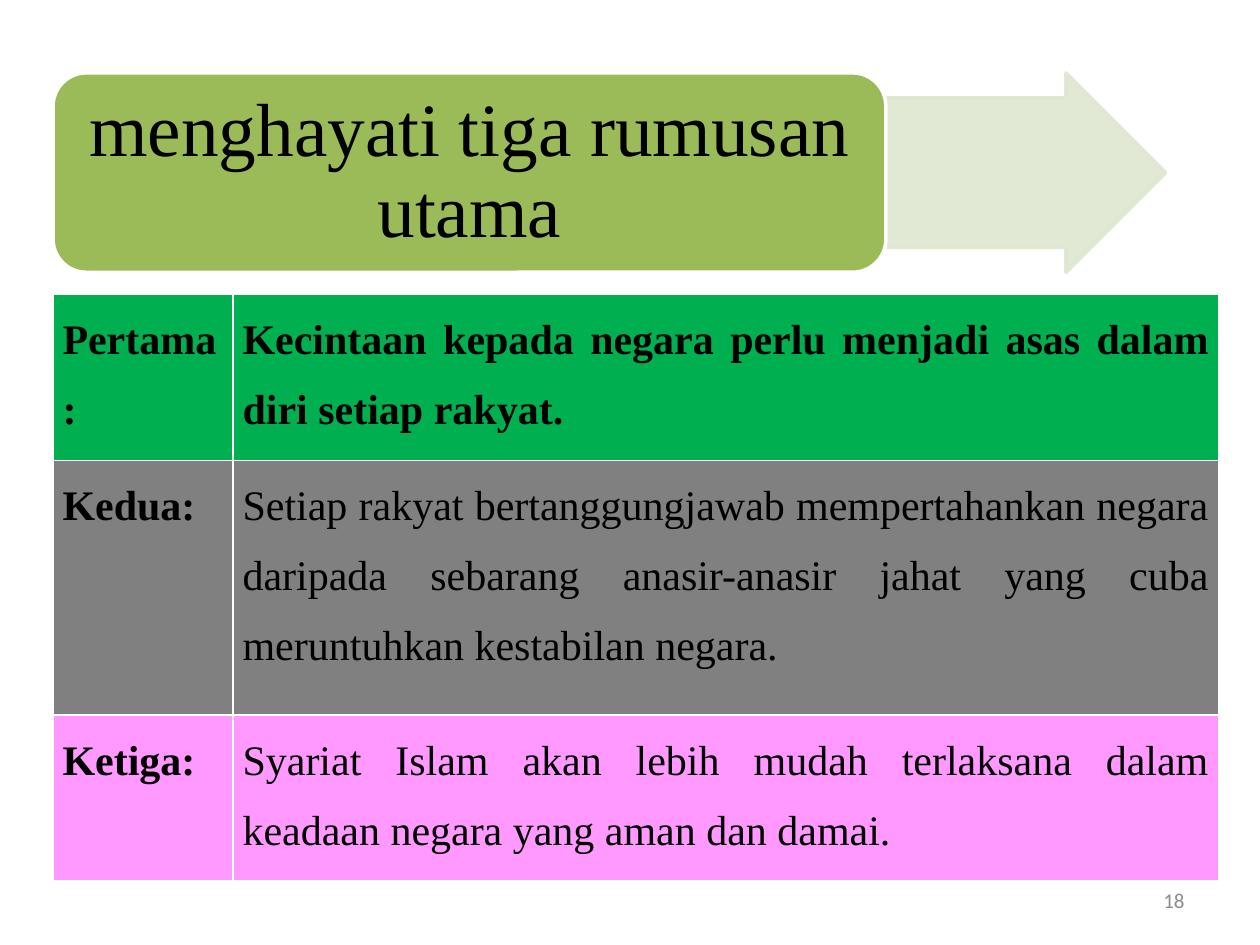
from dataclasses import dataclass

from lxml import etree
from pptx import Presentation
from pptx.dml.color import RGBColor
from pptx.enum import shapes, text
from pptx.oxml.ns import qn
from pptx.util import Cm, Pt


@dataclass(frozen=True)
class Theme:
    serif: str = "Times New Roman"
    sans: str = "Calibri"
    ink: str = "000000"
    white: str = "FFFFFF"
    page_grey: str = "8C8C8C"
    heading_green: str = "9BBB59"
    arrow_green: str = "DEE7D1"
    heading_size: float = 43
    table_size: float = 24
    page_size: float = 12


THEME = Theme()
LEFT, TOP, BAND_HEIGHT = 1.07, 1.47, 4.02
HEADING_WIDTH, ARROW_WIDTH = 16.79, 5.64
COLUMN_WIDTHS = (3.63, 19.86)
# label, statement, statement is bold, row fill, row height
CONCLUSIONS = (
    ("Pertama:", "Kecintaan kepada negara perlu menjadi asas dalam diri setiap rakyat.",
     True, "00B050", 3.35),
    ("Kedua:", "Setiap rakyat bertanggungjawab mempertahankan negara daripada sebarang "
     "anasir-anasir jahat yang cuba meruntuhkan kestabilan negara.",
     False, "808080", 5.13),
    ("Ketiga:", "Syariat Islam akan lebih mudah terlaksana dalam keadaan negara yang "
     "aman dan damai.", False, "FF99FF", 3.35),
)


def rgb(code):
    return RGBColor.from_string(code)


def write(frame, words, size, align, font=THEME.serif, color=THEME.ink,
          bold=False, spacing=1.0):
    frame.word_wrap = True
    paragraph = frame.paragraphs[0]
    paragraph.alignment = align
    paragraph.line_spacing = spacing
    run = paragraph.add_run()
    run.text = words
    run.font.name = font
    run.font.size = Pt(size)
    run.font.bold = bold
    run.font.color.rgb = rgb(color)


def set_alpha(color_format_parent, percent):
    """Make every solid colour below the given element partly transparent."""
    for color in color_format_parent.iter(qn("a:srgbClr")):
        etree.SubElement(color, qn("a:alpha")).set("val", str(percent * 1000))


def add_block(slide, preset, left, width, fill, line):
    block = slide.shapes.add_shape(preset, Cm(left), Cm(TOP), Cm(width), Cm(BAND_HEIGHT))
    block.shadow.inherit = False
    block.fill.solid()
    block.fill.fore_color.rgb = rgb(fill)
    block.line.color.rgb = rgb(line)
    block.line.width = Pt(2)
    return block


def add_heading(slide, words):
    arrow = add_block(slide, shapes.MSO_SHAPE.RIGHT_ARROW, LEFT + HEADING_WIDTH,
                      ARROW_WIDTH, THEME.arrow_green, THEME.arrow_green)
    arrow.adjustments[0] = 0.75
    arrow.adjustments[1] = 0.5
    set_alpha(arrow.element.spPr, 90)

    heading = add_block(slide, shapes.MSO_SHAPE.ROUNDED_RECTANGLE, LEFT,
                        HEADING_WIDTH, THEME.heading_green, THEME.white)
    frame = heading.text_frame
    frame.margin_left = frame.margin_right = Cm(0.2)
    frame.margin_top = frame.margin_bottom = Cm(0.2)
    frame.vertical_anchor = text.MSO_ANCHOR.MIDDLE
    write(frame, words, THEME.heading_size, text.PP_ALIGN.CENTER, spacing=0.9)


def add_conclusions(slide):
    heights = [row[-1] for row in CONCLUSIONS]
    table = slide.shapes.add_table(
        len(CONCLUSIONS), len(COLUMN_WIDTHS), Cm(LEFT), Cm(5.93),
        Cm(sum(COLUMN_WIDTHS)), Cm(sum(heights))).table
    for column, width in zip(table.columns, COLUMN_WIDTHS):
        column.width = Cm(width)
    for row, (label, statement, strong, fill, height) in zip(table.rows, CONCLUSIONS):
        row.height = Cm(height)
        for cell, words, bold in zip(row.cells, (label, statement), (True, strong)):
            cell.fill.solid()
            cell.fill.fore_color.rgb = rgb(fill)
            cell.margin_left = cell.margin_right = Cm(0.19)
            cell.margin_top = cell.margin_bottom = 0
            write(cell.text_frame, words, THEME.table_size, text.PP_ALIGN.JUSTIFY,
                  bold=bold, spacing=1.5)


def add_page_number(slide, number):
    frame = slide.shapes.add_textbox(Cm(18.2), Cm(17.65), Cm(5.93), Cm(1.01)).text_frame
    frame.vertical_anchor = text.MSO_ANCHOR.MIDDLE
    write(frame, number, THEME.page_size, text.PP_ALIGN.RIGHT, THEME.sans, THEME.page_grey)


def main():
    deck = Presentation()
    deck.slide_width, deck.slide_height = Cm(25.4), Cm(19.05)
    slide = deck.slides.add_slide(deck.slide_layouts[6])
    add_page_number(slide, "18")
    add_conclusions(slide)
    add_heading(slide, "menghayati tiga rumusan utama")
    deck.save("out.pptx")


if __name__ == "__main__":
    main()
